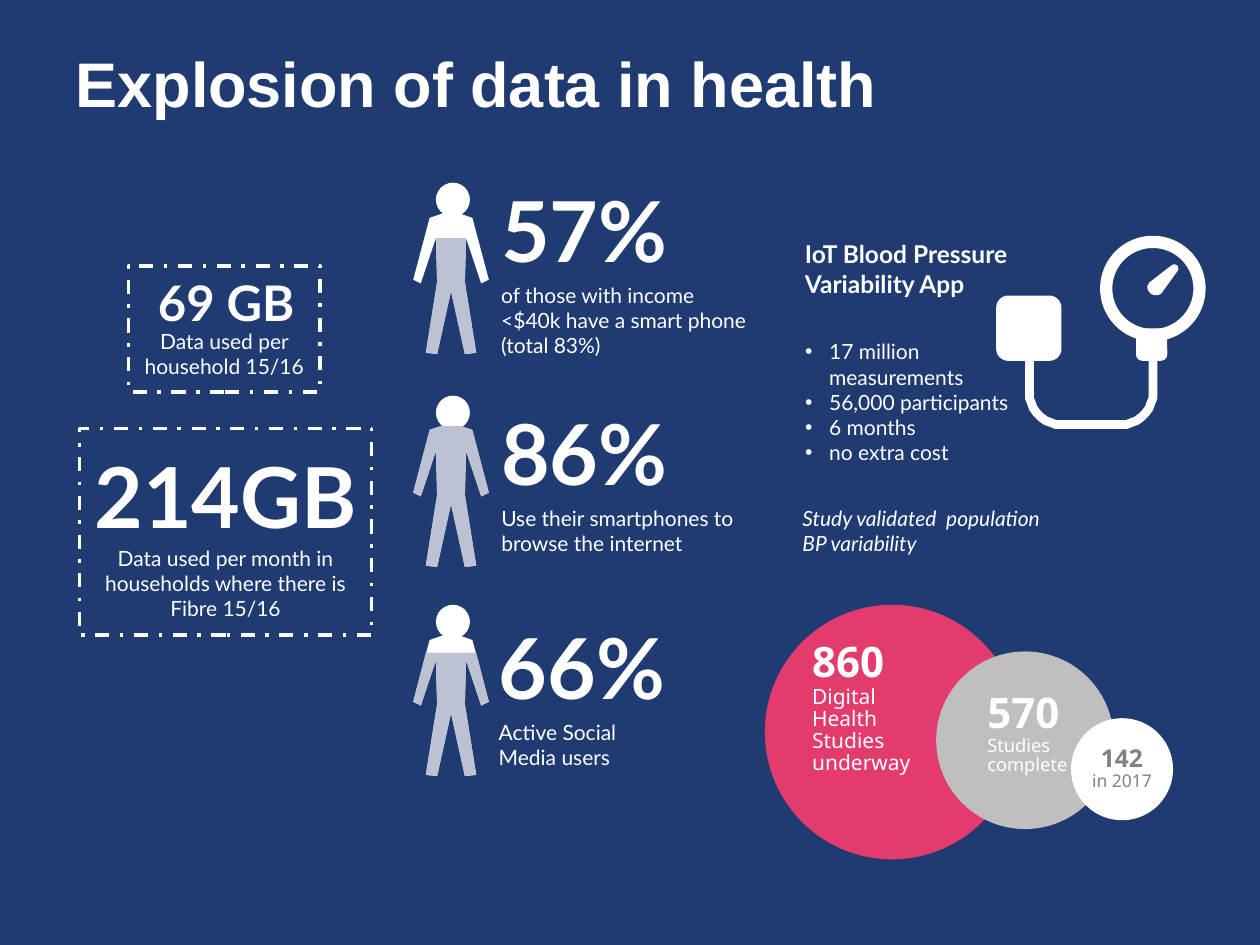
import math
from lxml import etree
from pptx import Presentation
from pptx import util as u
from pptx.dml.color import RGBColor
from pptx.enum import dml, shapes, text
from pptx.oxml import ns

PX = 9144  # 100 px to the inch
NAVY = RGBColor(0x1F, 0x3B, 0x71)
WHITE = RGBColor(0xFF, 0xFF, 0xFF)
PINK = RGBColor(0xE4, 0x3B, 0x6E)
SILVER = RGBColor(0xBF, 0xBF, 0xBF)
GREY = RGBColor(0x80, 0x80, 0x80)
HAZE = RGBColor(0xBC, 0xC2, 0xD2)

LEFT, CENTER = text.PP_ALIGN.LEFT, text.PP_ALIGN.CENTER
TOP, MIDDLE = text.MSO_ANCHOR.TOP, text.MSO_ANCHOR.MIDDLE
RECT, ROUND, OVAL = (shapes.MSO_SHAPE.RECTANGLE, shapes.MSO_SHAPE.ROUNDED_RECTANGLE,
                     shapes.MSO_SHAPE.OVAL)

# Right half of a person, measured from the centre line and the top of the head
LEGS = [(12, 44), (11, 79), (20, 135), (11, 136), (0, 86)]
ARM = [(30, 77), (24, 80)]
BODY = [(0, 22), (17, 28)] + ARM + LEGS
FIGURE_CENTER = 358


def px(*lengths):
    return [u.Emu(length * PX) for length in lengths]


def write(shape, lines, font="Lato", color=WHITE, align=LEFT, anchor=TOP,
          insets=(10, 10, 10, 10), italic=False, spacing=None):
    """Fill a shape with lines of (wording, size, bold)."""
    frame = shape.text_frame
    frame.text = "\n".join(line[0] for line in lines)
    frame.word_wrap = True
    frame.auto_size = text.MSO_AUTO_SIZE.NONE
    frame.vertical_anchor = anchor
    (frame.margin_left, frame.margin_top,
     frame.margin_right, frame.margin_bottom) = px(*insets)
    for paragraph, (_, size, bold) in zip(frame.paragraphs, lines):
        paragraph.alignment = align
        paragraph.space_before = u.Pt(0)
        if spacing:
            paragraph.line_spacing = spacing
        for run in paragraph.runs:
            run.font.name, run.font.size = font, u.Pt(size)
            run.font.bold, run.font.italic = bold, italic
            run.font.color.rgb = color


def label(slide, box, wording, size=12, bold=False, **style):
    write(slide.shapes.add_textbox(*px(*box)), [(wording, size, bold)], **style)


def paint(shape, fill=None, line=0, dash=None):
    shape.shadow.inherit = False
    if fill is None:
        shape.fill.background()
    else:
        shape.fill.solid()
        shape.fill.fore_color.rgb = fill
    if line:
        shape.line.color.rgb = WHITE
        shape.line.width = u.Pt(line)
        shape.line.dash_style = dash
    else:
        shape.line.fill.background()
    return shape


def preset(slide, kind, box, **look):
    return paint(slide.shapes.add_shape(kind, *px(*box)), **look)


def outline(slide, points, close=True, **look):
    builder = slide.shapes.build_freeform(*points[0], scale=PX)
    builder.add_line_segments(points[1:], close=close)
    return paint(builder.convert_to_shape(), **look)


def silhouette(slide, top, half, fill):
    """Draw a half outline together with its mirror image."""
    right = [(FIGURE_CENTER + x, top + y) for x, y in half]
    left = [(FIGURE_CENTER - x, top + y) for x, y in reversed(half)]
    outline(slide, right + left, fill=fill)


def person(slide, top, shaded):
    preset(slide, OVAL, (FIGURE_CENTER - 12, top, 27, 27), fill=WHITE)
    silhouette(slide, top, BODY, WHITE)
    silhouette(slide, top, shaded, HAZE)


def bullets(placeholder, box, items):
    (placeholder.left, placeholder.top,
     placeholder.width, placeholder.height) = px(*box)
    write(placeholder, [(item, 12, False) for item in items])
    for paragraph in placeholder.text_frame.paragraphs:
        props = paragraph._p.get_or_add_pPr()
        props.set("marL", str(19 * PX))
        props.set("indent", str(-19 * PX))
        etree.SubElement(props, ns.qn("a:buFont")).set("typeface", "Arial")
        etree.SubElement(props, ns.qn("a:buChar")).set("char", "•")


def data_use(slide):
    """Two dashed boxes on household data."""
    dash = dml.MSO_LINE.DASH_DOT
    preset(slide, RECT, (102, 211, 152, 100), line=2, dash=dash)
    label(slide, (63, 203, 233, 73), "69 GB", 28, True, align=CENTER, anchor=MIDDLE)
    label(slide, (102, 251, 152, 84), "Data used per household 15/16", align=CENTER)
    preset(slide, RECT, (63, 340, 232, 164), line=2, dash=dash)
    label(slide, (63, 356, 232, 73), "214GB", 48, True, align=CENTER, anchor=MIDDLE)
    label(slide, (63, 423, 232, 84),
          "Data used per month in households where there is Fibre 15/16", align=CENTER)


def people(slide):
    """Partly shaded persons with their shares."""
    shares = [
        (145, [(0, 44)] + LEGS, 388, 145, "57%", 227,
         "of those with income \v<$40k have a smart phone (total 83%)"),
        (314, [(0, 24), (8, 24), (17, 27)] + ARM + LEGS, 388, 322, "86%", 241,
         "Use their smartphones to browse the internet"),
        (480, [(0, 38), (20, 38)] + ARM + LEGS, 386, 492, "66%", 161,
         "Active Social Media users"),
    ]
    for head, shaded, left, top, share, width, caption in shares:
        person(slide, head, shaded)
        label(slide, (left, top, 168, 73), share, 48, True, anchor=MIDDLE)
        label(slide, (left, top + 69, width, 66), caption)


def blood_pressure_meter(slide):
    preset(slide, ROUND, (792, 236, 49, 49), fill=WHITE, line=2)
    preset(slide, ROUND, (903, 262, 22, 23), fill=WHITE, line=2)
    preset(slide, OVAL, (878, 192, 74, 74), line=7)
    needle = [(932, 213), (919, 231), (916, 231), (914, 229), (914, 227)]
    outline(slide, needle, fill=WHITE, line=4.75)
    # Tube with two rounded corners
    radius = 25
    tube = [(915, 286)]
    for center, start in ((890, 0), (842, 90)):
        for degrees in range(start, start + 91, 10):
            angle = math.radians(degrees)
            tube.append((center + radius * math.cos(angle),
                         312 + radius * math.sin(angle)))
    tube.append((817, 286))
    outline(slide, tube, close=False, line=5)


def studies(slide):
    """Overlapping circles of study counts."""
    underway = preset(slide, OVAL, (607, 480, 202, 202), fill=PINK)
    words = ("Digital", "Health", "Studies", "underway")
    write(underway, [("860", 24, True)] + [(word, 12, False) for word in words],
          font="Noto Sans", insets=(8, 0, 0, 0), spacing=0.88)
    complete = preset(slide, OVAL, (743, 517, 141, 141), fill=SILVER)
    write(complete, [("570", 24, True), ("Studies complete", 10.5, False)],
          font="Noto Sans", insets=(20, 12, 0, 0), spacing=0.88)
    recent = preset(slide, OVAL, (850, 570, 81, 81), fill=WHITE)
    write(recent, [("142", 14, True), ("in 2017", 10, False)], font="Noto Sans",
          color=GREY, align=CENTER, anchor=MIDDLE, insets=(0, 0, 0, 0), spacing=0.88)


def main():
    deck = Presentation()
    deck.slide_width, deck.slide_height = px(1000, 750)
    slide = deck.slides.add_slide(deck.slide_layouts[1])
    slide.background.fill.solid()
    slide.background.fill.fore_color.rgb = NAVY

    # Title
    title = slide.shapes.title
    title.left, title.top, title.width, title.height = px(50, 30, 900, 125)
    write(title, [("Explosion of data in health", 36, True)], font="Arial",
          insets=(10, 5, 10, 5))

    data_use(slide)
    people(slide)

    # Blood pressure app
    label(slide, (629, 180, 183, 73), "IoT Blood Pressure Variability App", 14, True)
    bullets(slide.placeholders[1], (629, 259, 209, 127),
            ["17 million measurements", "56,000 participants", "6 months",
             "no extra cost"])
    label(slide, (627, 391, 209, 127), "Study validated  population BP variability",
          italic=True)
    blood_pressure_meter(slide)

    studies(slide)
    deck.save("out.pptx")


if __name__ == "__main__":
    main()
